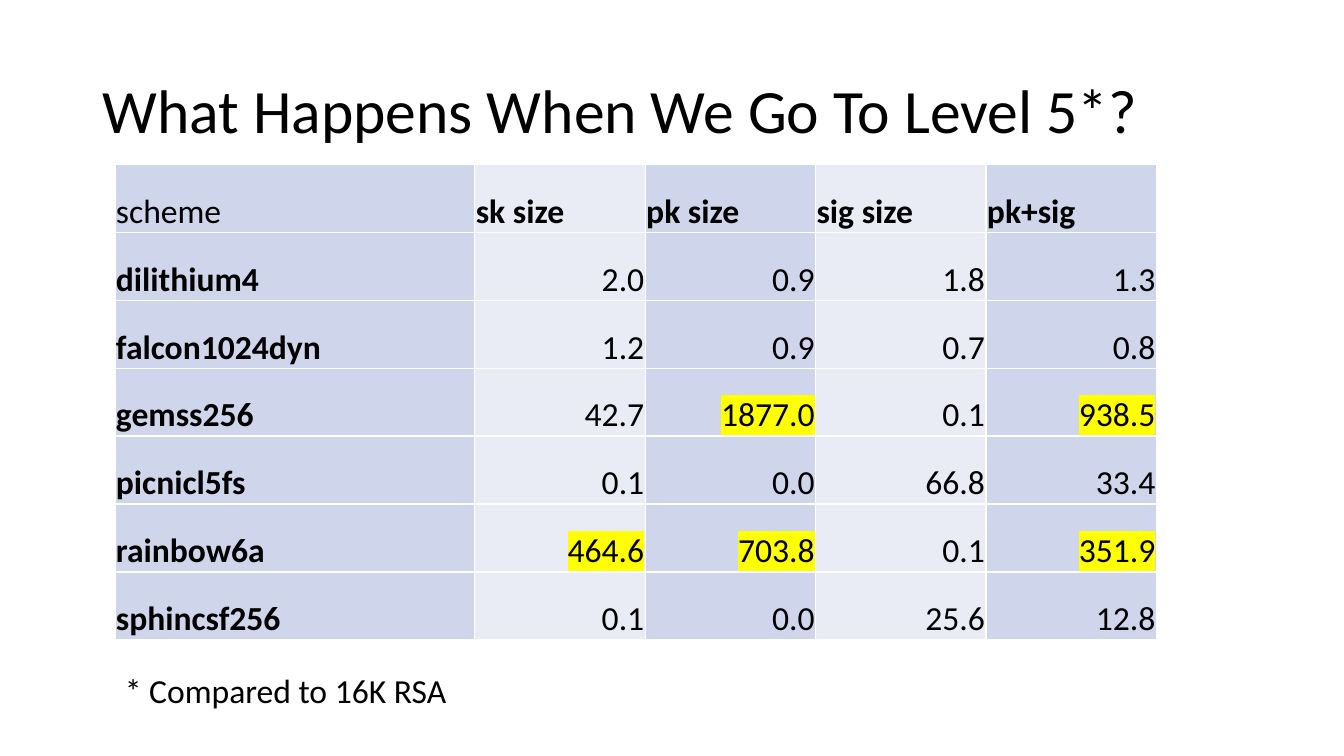
from pptx import Presentation
from pptx.dml.color import RGBColor
from pptx.enum.text import MSO_ANCHOR, MSO_AUTO_SIZE, PP_ALIGN
from pptx.oxml.ns import qn
from pptx.util import Inches, Pt
from lxml import etree

LEFT, RIGHT = PP_ALIGN.LEFT, PP_ALIGN.RIGHT
MIDDLE, BOTTOM = MSO_ANCHOR.MIDDLE, MSO_ANCHOR.BOTTOM
FIT_SHAPE = MSO_AUTO_SIZE.SHAPE_TO_FIT_TEXT

BLACK = RGBColor(0, 0, 0)
WHITE = RGBColor(0xFF, 0xFF, 0xFF)
YELLOW = RGBColor(0xFF, 0xFF, 0)
BANDS = RGBColor(0xCF, 0xD5, 0xEA), RGBColor(0xE9, 0xEB, 0xF5)

FONT = "Calibri"
HIGHLIGHT_FROM = 100  # sizes at least this large are marked
SCHEME_WIDTH, SIZE_WIDTH = 3.57, 1.69

HEADER = ("scheme", "sk size", "pk size", "sig size", "pk+sig")
SCHEMES = (
    ("dilithium4", "2.0", "0.9", "1.8", "1.3"),
    ("falcon1024dyn", "1.2", "0.9", "0.7", "0.8"),
    ("gemss256", "42.7", "1877.0", "0.1", "938.5"),
    ("picnicl5fs", "0.1", "0.0", "66.8", "33.4"),
    ("rainbow6a", "464.6", "703.8", "0.1", "351.9"),
    ("sphincsf256", "0.1", "0.0", "25.6", "12.8"),
)


def write(frame, text, size=24, bold=False, align=LEFT, spacing=None, highlight=None):
    para = frame.paragraphs[0]
    para.alignment = align
    if spacing:
        para.line_spacing = spacing
    span = para.add_run()
    span.text = text
    font = span.font
    font.size, font.bold, font.name = Pt(size), bold, FONT
    font.color.rgb = BLACK
    if highlight is not None:
        mark = etree.Element(qn("a:highlight"))
        etree.SubElement(mark, qn("a:srgbClr"), val=str(highlight))
        span._r.rPr.find(qn("a:solidFill")).addnext(mark)


def add_borders(cell, color, width):
    properties = cell._tc.get_or_add_tcPr()
    for position, side in enumerate(("lnL", "lnR", "lnT", "lnB")):
        line = etree.Element(qn(f"a:{side}"), w=str(Pt(width)))
        fill = etree.SubElement(line, qn("a:solidFill"))
        etree.SubElement(fill, qn("a:srgbClr"), val=str(color))
        properties.insert(position, line)


def add_title(page, left, top, width, height):
    title = page.shapes.title
    title.left, title.top = Inches(left), Inches(top)
    title.width, title.height = Inches(width), Inches(height)
    title.text_frame.vertical_anchor = MIDDLE
    write(title.text_frame, "What Happens When We Go To Level 5*?", size=44, spacing=0.9)


def fill_cell(cell, text, row, column):
    cell.vertical_anchor = BOTTOM
    cell.margin_left = cell.margin_right = cell.margin_top = Inches(0.01)
    cell.margin_bottom = 0
    cell.fill.solid()
    cell.fill.fore_color.rgb = BANDS[column % 2]
    add_borders(cell, WHITE, 1)
    is_value = row > 0 and column > 0
    marked = is_value and float(text) >= HIGHLIGHT_FROM
    write(cell.text_frame, text,
          bold=(row > 0) != (column > 0),
          align=RIGHT if is_value else LEFT,
          highlight=YELLOW if marked else None)


def add_size_table(page, left, top, width, height):
    rows = (HEADER, *SCHEMES)
    table = page.shapes.add_table(
        len(rows), len(HEADER), Inches(left), Inches(top), Inches(width), Inches(height)
    ).table
    table.first_row = table.horz_banding = False
    table.first_col = table.vert_banding = True
    for index, column in enumerate(table.columns):
        column.width = Inches(SIZE_WIDTH if index else SCHEME_WIDTH)
    for row, texts in enumerate(rows):
        for column, text in enumerate(texts):
            fill_cell(table.cell(row, column), text, row, column)


def add_footnote(page, left, top, width, height):
    box = page.shapes.add_textbox(Inches(left), Inches(top), Inches(width), Inches(height))
    box.text_frame.word_wrap = False
    box.text_frame.auto_size = FIT_SHAPE
    write(box.text_frame, "* Compared to 16K RSA")


def main():
    deck = Presentation()
    deck.slide_width, deck.slide_height = Inches(13.33), Inches(7.5)
    page = deck.slides.add_slide(deck.slide_layouts[5])
    add_title(page, 0.92, 0.4, 11.5, 1.45)
    add_size_table(page, 1.14, 1.63, SCHEME_WIDTH + 4 * SIZE_WIDTH, 4.72)
    add_footnote(page, 1.14, 6.6, 3.42, 0.5)
    deck.save("out.pptx")


if __name__ == "__main__":
    main()
